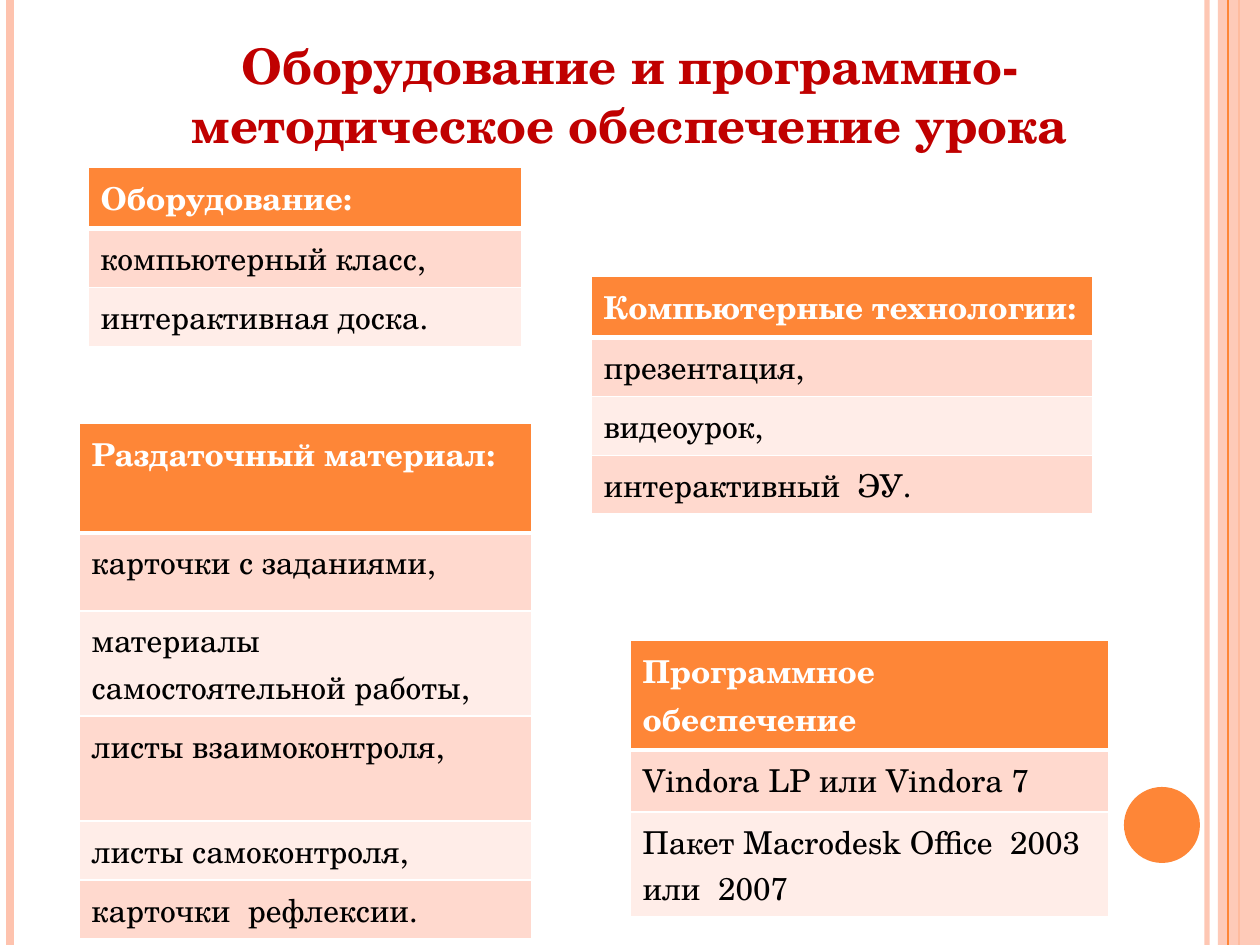
from lxml import etree
from pptx import Presentation
from pptx.dml.color import RGBColor
from pptx.enum.shapes import MSO_CONNECTOR, MSO_SHAPE
from pptx.enum.text import PP_ALIGN
from pptx.oxml.ns import qn
from pptx.util import Emu, Pt

# Content: lengths in px, 126 px to the inch
SCALE = 914400 // 126
WIDTH, HEIGHT = 1260, 945
FONT = "TeX Gyre Schola"
ORANGE, PEACH, WHITE = "FE8637", "FEC3AE", "FFFFFF"
BANDS = ["FFEDE8", "FFD9CE"]

TITLE = "Оборудование и программно-методическое обеспечение урока"
TITLE_BOX = (69, 29, 1122, 131)

# x, colour, width in points, opacity in percent
STRIPES = [
    (1207, PEACH, 3, 93),
    (10, PEACH, 4.5, 100),
    (1239, ORANGE, 1.5, 100),
    (1228, ORANGE, 0.75, 100),
]
EDGE_BAND = (1218, 0, 42, HEIGHT)
DISC = (1124, 787, 76, 76)

# left, top, width, then (row text, row height) with the heading first
TABLES = [
    (88, 167, 434, [
        ("Оборудование:", 61),
        ("компьютерный класс,", 59),
        ("интерактивная доска.", 59),
    ]),
    (591, 276, 502, [
        ("Компьютерные технологии:", 61),
        ("презентация,", 59),
        ("видеоурок,", 59),
        ("интерактивный  ЭУ.", 58),
    ]),
    (79, 423, 453, [
        ("Раздаточный материал:", 110),
        ("карточки с заданиями,", 78),
        ("материалы самостоятельной работы,", 105),
        ("листы взаимоконтроля,", 105),
        ("листы самоконтроля,", 59),
        ("карточки  рефлексии.", 58),
    ]),
    (630, 640, 479, [
        ("Программное обеспечение", 110),
        ("Vindora LP или Vindora 7", 62),
        ("Пакет Macrodesk Office  2003  или  2007", 105),
    ]),
]


def px(*lengths):
    return [Emu(length * SCALE) for length in lengths]


def rgb(code):
    return RGBColor.from_string(code)


def set_opacity(fill_parent, percent):
    color = next(fill_parent.iter(qn("a:srgbClr")))
    etree.SubElement(color, qn("a:alpha"), val=str(percent * 1000))


def write(frame, text, size, color, bold):
    paragraph = frame.paragraphs[0]
    run = paragraph.add_run()
    run.text = text
    formats = {"name": FONT, "size": Pt(size), "bold": bold}
    for key, value in formats.items():
        setattr(run.font, key, value)
    run.font.color.rgb = rgb(color)
    return paragraph


def add_stripe(slide, x, color, width, opacity):
    stripe = slide.shapes.add_connector(MSO_CONNECTOR.STRAIGHT, *px(x, 0, x, HEIGHT))
    stripe.line.color.rgb = rgb(color)
    stripe.line.width = Pt(width)
    if opacity < 100:
        set_opacity(stripe._element.spPr, opacity)
    etree.SubElement(stripe._element.spPr, qn("a:effectLst"))


def add_solid(slide, preset, box, color):
    solid = slide.shapes.add_shape(preset, *px(*box))
    solid.shadow.inherit = False
    solid.fill.solid()
    solid.fill.fore_color.rgb = rgb(color)
    solid.line.fill.background()
    return solid


def add_borders(cell, widths):
    properties = cell._tc.get_or_add_tcPr()
    for position, (side, width) in enumerate(widths.items()):
        border = etree.Element(qn("a:" + side), w=str(Pt(width)))
        fill = etree.SubElement(border, qn("a:solidFill"))
        etree.SubElement(fill, qn("a:srgbClr"), val=WHITE)
        properties.insert(position, border)


def add_list_table(slide, left, top, width, rows):
    total = sum(height for _, height in rows)
    table = slide.shapes.add_table(len(rows), 1, *px(left, top, width, total)).table
    for index, (text, height) in enumerate(rows):
        heading = index == 0
        table.rows[index].height = px(height)[0]
        cell = table.cell(index, 0)
        cell.fill.solid()
        cell.fill.fore_color.rgb = rgb(ORANGE if heading else BANDS[index % 2])
        write(cell.text_frame, text, 18, WHITE if heading else "000000", heading)
        add_borders(cell, {"lnL": 1, "lnR": 1,
                           "lnT": 3 if index == 1 else 1,
                           "lnB": 3 if heading else 1})


def main():
    deck = Presentation()
    deck.slide_width, deck.slide_height = px(WIDTH, HEIGHT)
    slide = deck.slides.add_slide(deck.slide_layouts[6])

    # Side decoration
    for stripe in STRIPES[:3]:
        add_stripe(slide, *stripe)
    edge = add_solid(slide, MSO_SHAPE.RECTANGLE, EDGE_BAND, PEACH)
    set_opacity(edge._element.spPr, 87)
    add_stripe(slide, *STRIPES[3])
    add_solid(slide, MSO_SHAPE.OVAL, DISC, ORANGE)

    # Lists
    for table in TABLES:
        add_list_table(slide, *table)

    # Title
    title = slide.shapes.add_textbox(*px(*TITLE_BOX)).text_frame
    title.word_wrap = True
    write(title, TITLE, 28, "C00000", True).alignment = PP_ALIGN.CENTER

    deck.save("out.pptx")


if __name__ == "__main__":
    main()
